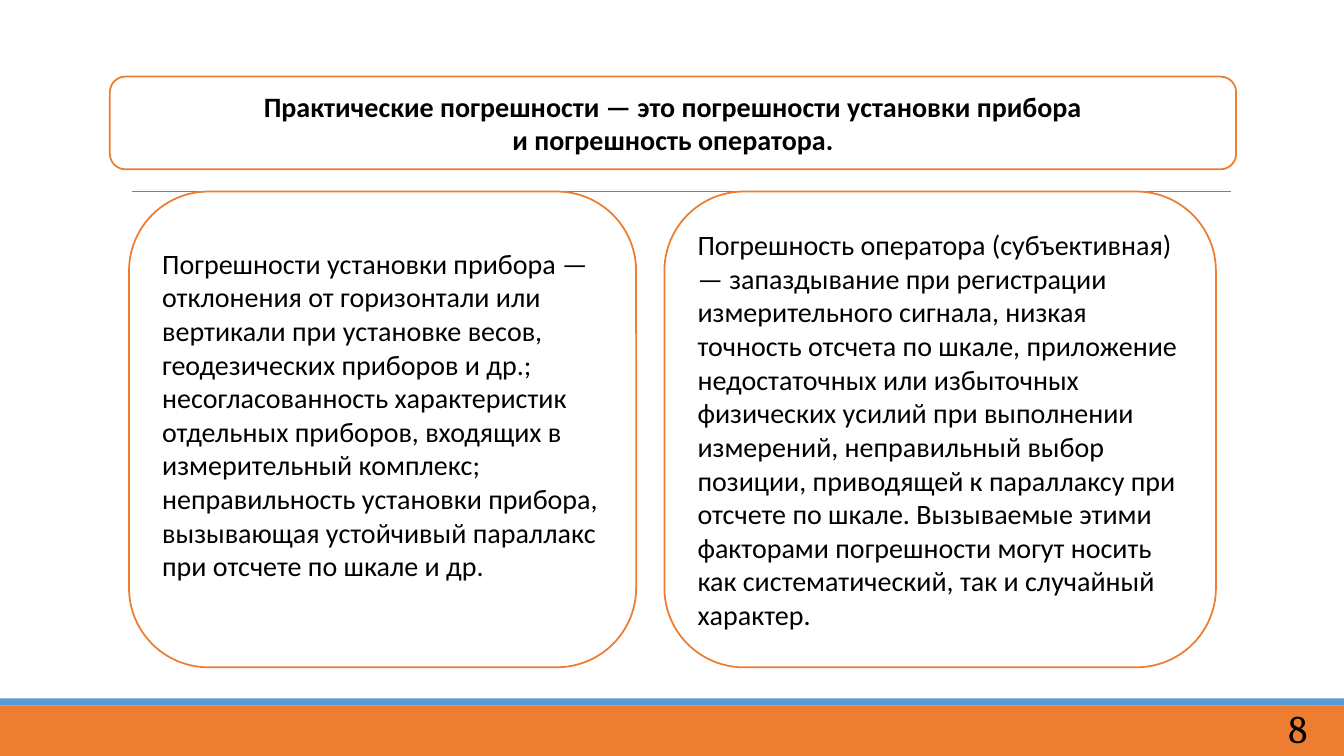
from pptx import Presentation
from pptx.dml.color import RGBColor
from pptx.enum.shapes import MSO_CONNECTOR, MSO_SHAPE
from pptx.enum.text import MSO_ANCHOR, PP_ALIGN
from pptx.oxml.ns import qn
from pptx.util import Inches, Pt
from lxml import etree

RECT, ROUND = MSO_SHAPE.RECTANGLE, MSO_SHAPE.ROUNDED_RECTANGLE
LEFT, CENTER = PP_ALIGN.LEFT, PP_ALIGN.CENTER
ORANGE, BLUE, GRAY, WHITE, BLACK = "ED7D31", "5B9BD5", "808080", "FFFFFF", "000000"

HEADING = ("Практические погрешности — это погрешности установки прибора\n"
           "и погрешность оператора.")
SETUP = ("Погрешности установки прибора — отклонения от горизонтали или вертикали "
         "при установке весов, геодезических приборов и др.; несогласованность "
         "характеристик отдельных приборов, входящих в измерительный комплекс; "
         "неправильность установки прибора, вызывающая устойчивый параллакс "
         "при отсчете по шкале и др.")
OPERATOR = ("Погрешность оператора (субъективная) — запаздывание при регистрации "
            "измерительного сигнала, низкая точность отсчета по шкале, приложение "
            "недостаточных или избыточных физических усилий при выполнении измерений, "
            "неправильный выбор позиции, приводящей к параллаксу при отсчете по шкале. "
            "Вызываемые этими факторами погрешности могут носить как систематический, "
            "так и случайный характер.")


def rgb(color):
    return RGBColor.from_string(color)


prs = Presentation()
prs.slide_width, prs.slide_height = Inches(13.33), Inches(7.5)
s = prs.slides.add_slide(prs.slide_layouts[6])

for top, height, color in [(7, 0.5, ORANGE), (6.93, 0.07, BLUE)]:
    sp = s.shapes.add_shape(RECT, 0, Inches(top), prs.slide_width, Inches(height))
    sp.shadow.inherit = False
    sp.fill.solid()
    sp.fill.fore_color.rgb = rgb(color)
    sp.line.fill.background()

rule = s.shapes.add_connector(MSO_CONNECTOR.STRAIGHT, Inches(1.31), Inches(1.9),
                              Inches(12.21), Inches(1.9))
rule.line.color.rgb = rgb(GRAY)
rule.line.width = Pt(0.5)
etree.SubElement(rule._element.spPr, qn("a:effectLst"))

number = s.shapes.add_textbox(Inches(12.68), Inches(6.92), Inches(0.5), Inches(0.58))
tf = number.text_frame
tf.word_wrap = True
tf.vertical_anchor = MSO_ANCHOR.BOTTOM
tf.text = "8"
p = tf.paragraphs[0]
p.line_spacing = 0.85
r = p.runs[0]
r.font.name, r.font.size = "Cambria", Pt(28)
r.font.color.rgb = rgb(BLACK)

for text, left, top, width, height, align, bold, bottom in [
    (HEADING, 1.09, 0.76, 11.17, 0.92, CENTER, True, 0.05),
    (SETUP, 1.28, 1.9, 5.03, 4.72, LEFT, False, 0.35),
    (OPERATOR, 6.59, 1.9, 5.47, 4.72, LEFT, False, 0.05),
]:
    sp = s.shapes.add_shape(ROUND, Inches(left), Inches(top), Inches(width), Inches(height))
    sp.shadow.inherit = False
    sp.fill.solid()
    sp.fill.fore_color.rgb = rgb(WHITE)
    sp.line.color.rgb = rgb(ORANGE)
    sp.line.width = Pt(1.25)
    tf = sp.text_frame
    tf.word_wrap = True
    tf.vertical_anchor = MSO_ANCHOR.MIDDLE
    tf.margin_bottom = Inches(bottom)
    tf.text = text
    for p in tf.paragraphs:
        p.alignment = align
        r = p.runs[0]
        r.font.name, r.font.size, r.font.bold = "Calibri", Pt(20), bold
        r.font.color.rgb = rgb(BLACK)

prs.save("out.pptx")
